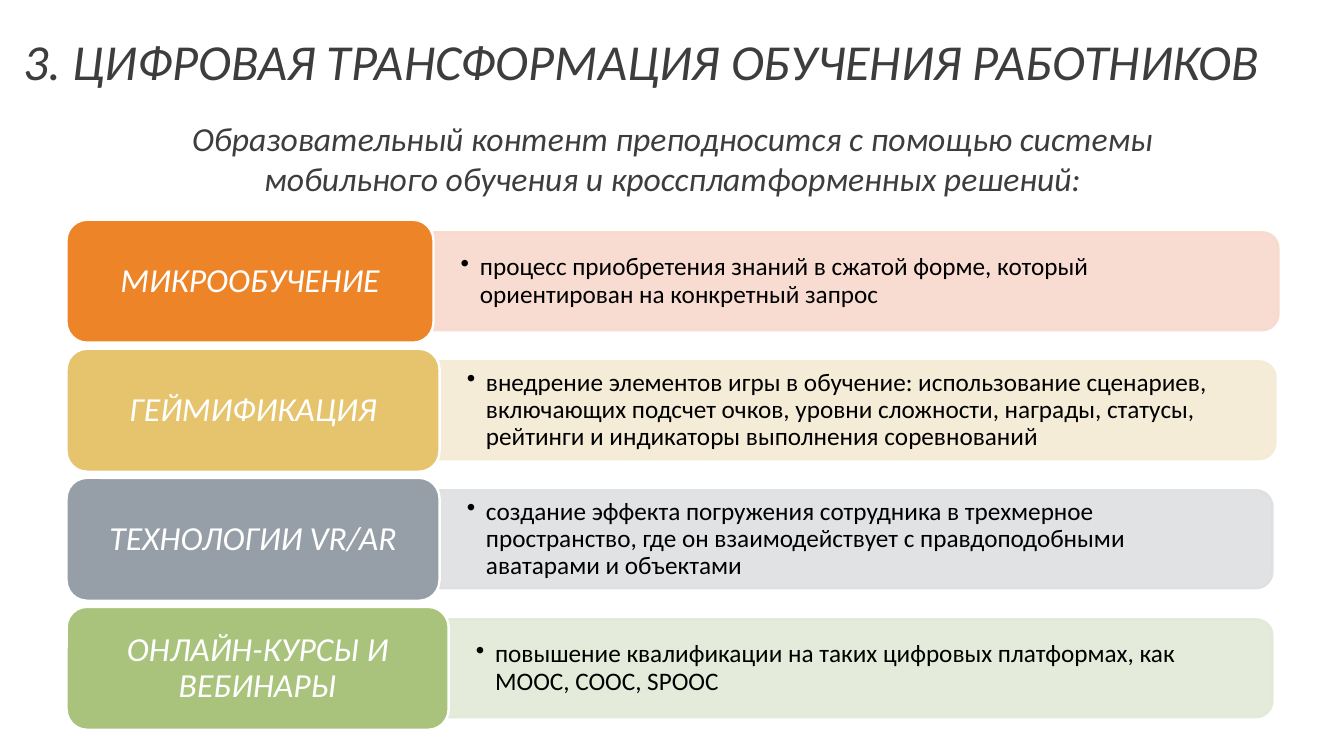
from lxml.etree import SubElement
from pptx import Presentation
from pptx.dml.color import RGBColor
from pptx.enum.shapes import MSO_SHAPE as Shape
from pptx.enum.text import MSO_ANCHOR as Anchor, PP_ALIGN as Align
from pptx.oxml.ns import qn
from pptx.util import Inches, Pt

FONT = "Calibri"
DARK, WHITE, BLACK = "3D3D3D", "FFFFFF", "000000"
ROWS_TOP, ROW_PITCH, ROW_HEIGHT = 2.18, 1.28, 1.22
ROWS_LEFT = 0.66
PANEL_HEIGHT, DETAIL_HEIGHT = 0.97, 0.88

# label, detail, label colour, panel colour, label width, panel width
METHODS = [
    ("МИКРООБУЧЕНИЕ",
     "процесс приобретения знаний в сжатой форме, который ориентирован на конкретный запрос",
     "ED8428", "F8D9CD", 3.64, 8.38),
    ("ГЕЙМИФИКАЦИЯ",
     "внедрение элементов игры в обучение: использование сценариев, включающих подсчет очков, "
     "уровни сложности, награды, статусы, рейтинги и индикаторы выполнения соревнований",
     "E6C46D", "F5EAD4", 3.7, 8.29),
    ("ТЕХНОЛОГИИ VR/AR",
     "создание эффекта погружения сотрудника в трехмерное пространство, где он взаимодействует "
     "с правдоподобными аватарами и объектами",
     "969FA7", "DDDFE1", 3.7, 8.26),
    ("ОНЛАЙН-КУРСЫ И ВЕБИНАРЫ",
     "повышение квалификации на таких цифровых платформах, как МООС, COOC, SPOOC",
     "A9C37C", "E2E9D7", 3.79, 8.17),
]


def rgb(value):
    return RGBColor.from_string(value)


def write(shape, text, size=24, color=DARK, italic=True, align=Align.CENTER,
          anchor=Anchor.TOP, spacing=None, wrap=True, margins=(0.1, 0.05), bullet=False):
    frame = shape.text_frame
    frame.word_wrap = wrap
    frame.vertical_anchor = anchor
    frame.margin_left = frame.margin_right = Inches(margins[0])
    frame.margin_top = frame.margin_bottom = Inches(margins[1])
    paragraph = frame.paragraphs[0]
    paragraph.alignment = align
    paragraph.line_spacing = spacing
    run = paragraph.add_run()
    run.text = text
    font = run.font
    font.name, font.size, font.italic = FONT, Pt(size), italic
    font.color.rgb = rgb(color)
    if bullet:
        props = paragraph._p.get_or_add_pPr()
        props.set("marL", str(Inches(0.19)))
        props.set("indent", str(-Inches(0.19)))
        SubElement(props, qn("a:buChar")).set("char", "•")


def add_text(slide, box, text, **style):
    write(slide.shapes.add_textbox(*map(Inches, box)), text, **style)


def add_block(slide, preset, box, fill, line, opacity=None):
    block = slide.shapes.add_shape(preset, *map(Inches, box))
    block.shadow.inherit = False
    block.fill.solid()
    block.fill.fore_color.rgb = rgb(fill)
    block.line.color.rgb = rgb(line)
    block.line.width = Pt(1.75)
    if opacity:
        for color in block._element.spPr.iter(qn("a:srgbClr")):
            SubElement(color, qn("a:alpha")).set("val", str(opacity * 1000))
    return block


def add_panel(slide, left, middle, width, color):
    """Panel rounded on the right: a top-rounded block turned a quarter clockwise."""
    box = (left + (width - PANEL_HEIGHT) / 2, middle - width / 2, PANEL_HEIGHT, width)
    add_block(slide, Shape.ROUND_2_SAME_RECTANGLE, box, color, color, opacity=90).rotation = 90


def add_method(slide, left, top, method):
    label, detail, label_color, panel_color, label_width, panel_width = method
    middle = top + ROW_HEIGHT / 2
    panel_left = left + label_width
    add_panel(slide, panel_left, middle, panel_width, panel_color)
    add_text(slide, (panel_left, middle - DETAIL_HEIGHT / 2, panel_width - 0.05, DETAIL_HEIGHT),
             detail, size=18, color=BLACK, italic=False, align=Align.LEFT,
             anchor=Anchor.MIDDLE, spacing=0.9, margins=(0.27, 0.14), bullet=True)
    card = add_block(slide, Shape.ROUNDED_RECTANGLE, (left, top, label_width, ROW_HEIGHT),
                     label_color, WHITE)
    write(card, label, color=WHITE, anchor=Anchor.MIDDLE, spacing=0.9)


def add_heading(slide):
    add_text(slide, (0.13, 0.25, 13.41, 0.71), "3. ЦИФРОВАЯ ТРАНСФОРМАЦИЯ ОБУЧЕНИЯ РАБОТНИКОВ",
             size=36, align=Align.LEFT, wrap=False)
    add_text(slide, (0.97, 1.12, 11.4, 0.91),
             "Образовательный контент преподносится с помощью системы "
             "мобильного обучения и кроссплатформенных решений:")


def main():
    deck = Presentation()
    deck.slide_width, deck.slide_height = Inches(13.33), Inches(7.5)
    slide = deck.slides.add_slide(deck.slide_layouts[6])
    for row, method in enumerate(METHODS):
        add_method(slide, ROWS_LEFT, ROWS_TOP + row * ROW_PITCH, method)
    add_heading(slide)
    deck.save("out.pptx")


if __name__ == "__main__":
    main()
